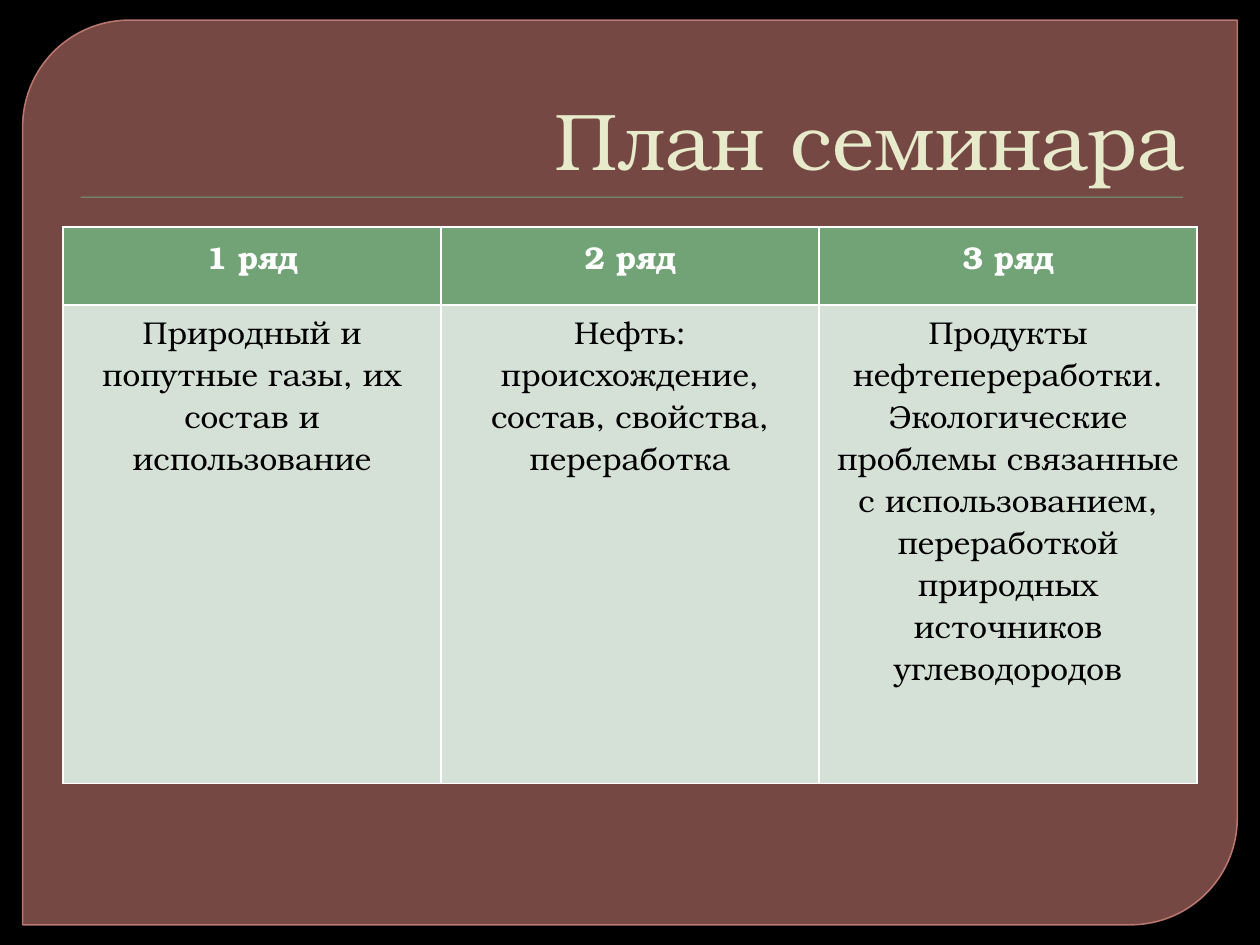
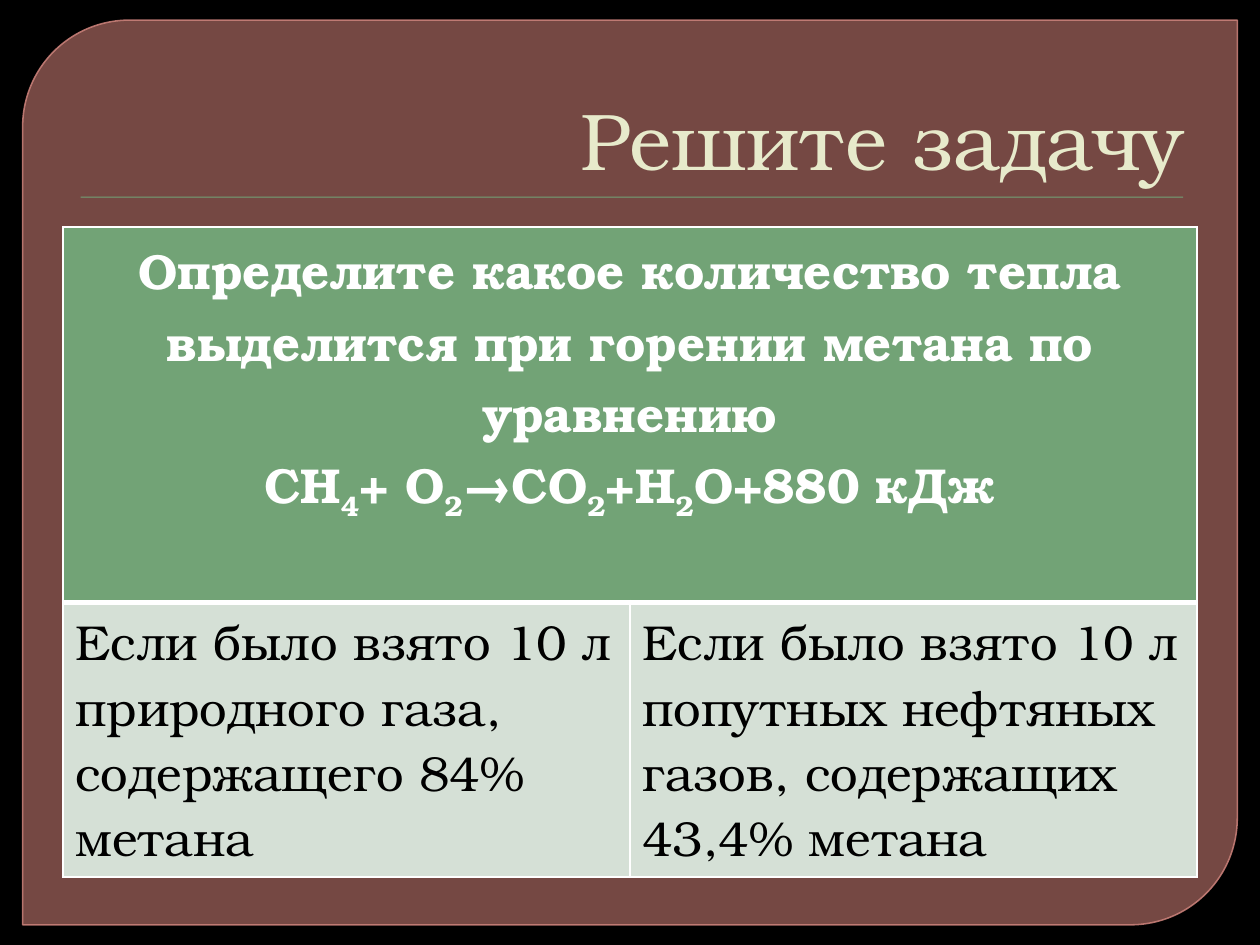
from lxml import etree
from pptx import Presentation
from pptx.dml.color import RGBColor
from pptx.enum.shapes import MSO_SHAPE
from pptx.enum.text import MSO_ANCHOR, MSO_AUTO_SIZE, PP_ALIGN
from pptx.oxml.ns import qn
from pptx.util import Inches, Pt

PANEL_SHAPE, RULE_SHAPE = MSO_SHAPE.ROUND_2_DIAG_RECTANGLE, MSO_SHAPE.RECTANGLE
LEFT, CENTER, RIGHT = PP_ALIGN.LEFT, PP_ALIGN.CENTER, PP_ALIGN.RIGHT
BOTTOM, NO_FIT = MSO_ANCHOR.BOTTOM, MSO_AUTO_SIZE.NONE

BLACK = RGBColor(0x00, 0x00, 0x00)
WHITE = RGBColor(0xFF, 0xFF, 0xFF)
CLAY = RGBColor(0xB5, 0x6F, 0x68)
CLAY_EDGE = RGBColor(0xCA, 0x81, 0x7A)
GREEN = RGBColor(0x72, 0xA3, 0x76)
PALE_GREEN = RGBColor(0xD5, 0xE0, 0xD6)
CREAM = RGBColor(0xE7, 0xEA, 0xCB)

FONT = "TeX Gyre Bonum"
WIDTH, HEIGHT = Inches(10), Inches(7.5)
MARGIN = WIDTH * 0.05
CONTENT_WIDTH = WIDTH - 2 * MARGIN
TABLE_TOP = HEIGHT * 0.24

PLAN = [
    [["1 ряд"], ["2 ряд"], ["3 ряд"]],
    [
        ["Природный и попутные газы, их состав и использование"],
        ["Нефть: происхождение, состав, свойства, переработка"],
        [
            "Продукты нефтепереработки.",
            "Экологические проблемы связанные с использованием, "
            "переработкой природных источников углеводородов",
        ],
    ],
]
PROBLEM = [
    [
        [
            "Определите какое количество тепла выделится при горении метана по уравнению",
            "СН_4_+ О_2_→СО_2_+Н_2_О+880 кДж",
        ],
        [],
    ],
    [
        ["Если было взято 10 л природного газа, содержащего 84% метана"],
        ["Если было взято 10 л попутных нефтяных газов, содержащих 43,4% метана"],
    ],
]


def set_alpha(fill, percent):
    """Make a solid fill partly transparent."""
    color = fill._xPr.find(qn("a:solidFill"))[0]
    etree.SubElement(color, qn("a:alpha"), val=str(percent * 1000))


def add_rule_shadow(rule):
    """Cast a short black shadow straight down."""
    effects = rule.element.spPr.find(qn("a:effectLst"))
    shadow = etree.SubElement(
        effects, qn("a:outerShdw"), blurRad=str(Pt(1)), dist=str(Pt(1)), dir="5400000"
    )
    color = etree.SubElement(shadow, qn("a:srgbClr"), val=str(BLACK))
    etree.SubElement(color, qn("a:alpha"), val="75000")


def add_backdrop_shape(page, kind, box, color):
    """Add a filled, flat shape behind the title."""
    shape = page.shapes.add_shape(kind, *(Inches(length) for length in box))
    shape.shadow.inherit = False
    shape.fill.solid()
    shape.fill.fore_color.rgb = color
    page.shapes.title.element.addprevious(shape.element)
    return shape


def add_page(deck, heading):
    """Add a page with the shared backdrop and title style."""
    page = deck.slides.add_slide(deck.slide_layouts[5])
    page.background.fill.solid()
    page.background.fill.fore_color.rgb = BLACK

    panel = add_backdrop_shape(page, PANEL_SHAPE, (0.18, 0.16, 9.64, 7.18), CLAY)
    panel.adjustments[0], panel.adjustments[1] = 0.118, 0
    set_alpha(panel.fill, 65)
    panel.line.color.rgb = CLAY_EDGE
    panel.line.width = Pt(0.87)
    set_alpha(panel.line.fill, 88)

    rule = add_backdrop_shape(page, RULE_SHAPE, (0.64, 1.56, 8.75, 0.01), GREEN)
    rule.line.fill.background()
    add_rule_shadow(rule)

    title = page.shapes.title
    title.left, title.top = int(MARGIN), Inches(0.28)
    title.width, title.height = int(CONTENT_WIDTH), Inches(1.25)
    frame = title.text_frame
    frame.text = heading
    frame.auto_size = NO_FIT
    frame.vertical_anchor = BOTTOM
    style_paragraph(frame.paragraphs[0], 46, CREAM, RIGHT)
    return page


def style_paragraph(para, size, color, align, bold=False):
    """Set the alignment and font of a whole paragraph."""
    para.alignment = align
    para.font.name = FONT
    para.font.size = Pt(size)
    para.font.bold = bold
    para.font.color.rgb = color


def write_spans(para, text):
    """Write text in which underscores enclose subscripts."""
    for index, piece in enumerate(text.split("_")):
        span = para.add_run()
        span.text = piece
        if index % 2:
            span.font._element.set("baseline", "-25000")


def set_borders(cell, widths):
    """Draw white cell edges in left, right, top, bottom order."""
    properties = cell._tc.get_or_add_tcPr()
    for side, width in zip("LRTB", widths):
        line = etree.SubElement(properties, qn(f"a:ln{side}"), w=str(Pt(width)))
        fill = etree.SubElement(line, qn("a:solidFill"))
        etree.SubElement(fill, qn("a:srgbClr"), val=str(WHITE))


def add_content_table(page, rows, heights, size, body_align, divider=1, merge_head=False):
    """Add a table of equal columns with a green header row."""
    columns = len(rows[0])
    table = page.shapes.add_table(
        len(rows), columns, int(MARGIN), int(TABLE_TOP),
        int(CONTENT_WIDTH), Inches(sum(heights)),
    ).table
    if merge_head:
        table.cell(0, 0).merge(table.cell(0, columns - 1))
    for row_index, (row, height) in enumerate(zip(rows, heights)):
        table.rows[row_index].height = Inches(height)
        head = row_index == 0
        for column, texts in enumerate(row):
            cell = table.cell(row_index, column)
            set_borders(cell, (1, 1, 1, divider) if head else (1, 1, divider, 1))
            cell.fill.solid()
            cell.fill.fore_color.rgb = GREEN if head else PALE_GREEN
            frame = cell.text_frame
            for index, text in enumerate(texts):
                para = frame.add_paragraph() if index else frame.paragraphs[0]
                write_spans(para, text)
                style_paragraph(para, size, WHITE if head else BLACK,
                                CENTER if head else body_align, head)


def main():
    """Build and save the seminar deck."""
    deck = Presentation()
    deck.slide_width, deck.slide_height = WIDTH, HEIGHT
    plan_page = add_page(deck, "План семинара")
    add_content_table(plan_page, PLAN, (0.62, 3.8), 18, CENTER)
    problem_page = add_page(deck, "Решите задачу")
    add_content_table(problem_page, PROBLEM, (2.98, 2.18), 28, LEFT,
                      divider=3, merge_head=True)
    deck.save("out.pptx")


if __name__ == "__main__":
    main()
